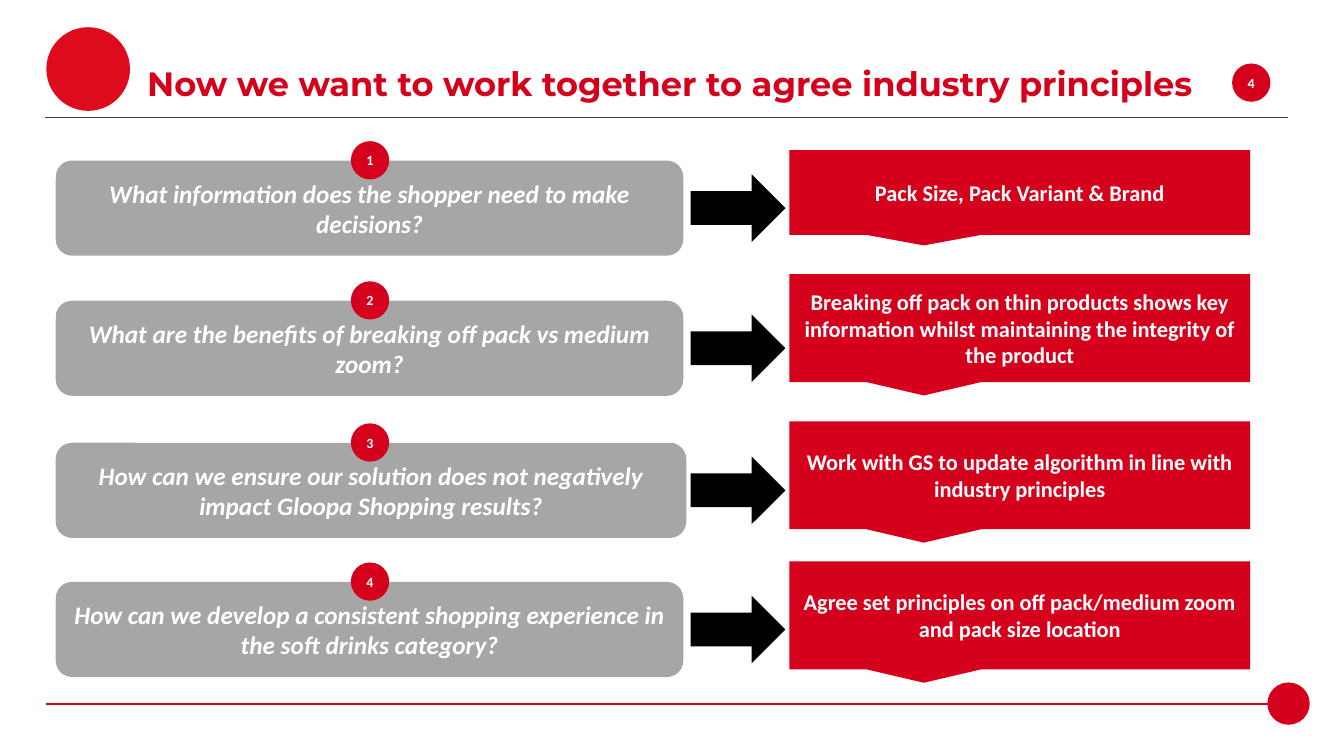
from dataclasses import dataclass
from typing import Optional

from lxml import etree
from pptx import Presentation
from pptx.dml.color import RGBColor
from pptx.enum.shapes import MSO_CONNECTOR, MSO_SHAPE
from pptx.enum.text import MSO_ANCHOR, PP_ALIGN
from pptx.oxml.ns import qn
from pptx.util import Inches, Pt

OVAL = MSO_SHAPE.OVAL
ROUNDED = MSO_SHAPE.ROUNDED_RECTANGLE
ARROW = MSO_SHAPE.RIGHT_ARROW
CALLOUT = MSO_SHAPE.RECTANGULAR_CALLOUT
STRAIGHT = MSO_CONNECTOR.STRAIGHT
CENTER = PP_ALIGN.CENTER
LEFT = PP_ALIGN.LEFT
MIDDLE = MSO_ANCHOR.MIDDLE
BOTTOM = MSO_ANCHOR.BOTTOM

RED = RGBColor(0xD5, 0x00, 0x1B)
BRIGHT_RED = RGBColor(0xDE, 0x0B, 0x1C)
GREY = RGBColor(0xA6, 0xA6, 0xA6)
DARK = RGBColor(0x40, 0x40, 0x40)
BLACK = RGBColor(0x00, 0x00, 0x00)
WHITE = RGBColor(0xFF, 0xFF, 0xFF)

BADGE_SIZE = 0.38
BADGE_RISE = 0.2
ARROW_DROP = 0.13


@dataclass
class TextStyle:
    size: float
    font: str = "Calibri"
    color: RGBColor = WHITE
    italic: bool = False


@dataclass
class Principle:
    question: str
    answer: str
    top: float
    answer_top: float
    answer_height: float = 1.07
    question_width: float = 6.21


TITLE_STYLE = TextStyle(24, "Montserrat", RED)
QUESTION_STYLE = TextStyle(18, italic=True)
ANSWER_STYLE = TextStyle(16)
BADGE_STYLE = TextStyle(10)

PRINCIPLES = [
    Principle("What information does the shopper need to make decisions?",
              "Pack Size, Pack Variant & Brand", 1.6, 1.49, answer_height=0.84),
    Principle("What are the benefits of breaking off pack vs medium zoom?",
              "Breaking off pack on thin products shows key information whilst "
              "maintaining the integrity of the product", 2.99, 2.72),
    Principle("How can we ensure our solution does not negatively impact "
              "Gloopa Shopping results?",
              "Work with GS to update algorithm in line with industry principles",
              4.4, 4.18, question_width=6.24),
    Principle("How can we develop a consistent shopping experience in the "
              "soft drinks category?",
              "Agree set principles on off pack/medium zoom and pack size location",
              5.78, 5.57),
]


def write(shape, text: str, style: TextStyle, align=CENTER, anchor=MIDDLE) -> None:
    frame = shape.text_frame
    frame.word_wrap = True
    frame.vertical_anchor = anchor
    paragraph = frame.paragraphs[0]
    paragraph.alignment = align
    run = paragraph.add_run()
    run.text = text
    run.font.name = style.font
    run.font.size = Pt(style.size)
    run.font.bold = True
    run.font.italic = style.italic
    run.font.color.rgb = style.color


def add_block(slide, kind, left: float, top: float, width: float, height: float,
              fill: RGBColor, text: str = "", style: Optional[TextStyle] = None):
    shape = slide.shapes.add_shape(
        kind, Inches(left), Inches(top), Inches(width), Inches(height))
    shape.shadow.inherit = False
    shape.fill.solid()
    shape.fill.fore_color.rgb = fill
    shape.line.fill.background()
    if style:
        write(shape, text, style)
    return shape


def add_badge(slide, left: float, top: float, number: int) -> None:
    add_block(slide, OVAL, left, top, BADGE_SIZE, BADGE_SIZE, RED,
              str(number), BADGE_STYLE)


def add_rule(slide, left: float, right: float, y: float,
             color: RGBColor, weight: float) -> None:
    rule = slide.shapes.add_connector(
        STRAIGHT, Inches(left), Inches(y), Inches(right), Inches(y))
    rule.line.color.rgb = color
    rule.line.width = Pt(weight)
    etree.SubElement(rule.line._get_or_add_ln().getparent(), qn("a:effectLst"))


def add_title(slide, text: str) -> None:
    box = slide.shapes.add_textbox(
        Inches(1.46), Inches(0.47), Inches(11.05), Inches(0.56))
    frame = box.text_frame
    frame.margin_left = frame.margin_right = Inches(0)
    frame.margin_top = frame.margin_bottom = Inches(0)
    write(box, text, TITLE_STYLE, LEFT, BOTTOM)
    frame.paragraphs[0].line_spacing = 0.9


def add_principle(slide, number: int, principle: Principle) -> None:
    question = add_block(slide, ROUNDED, 0.56, principle.top,
                         principle.question_width, 0.93, GREY,
                         principle.question, QUESTION_STYLE)
    question.line.color.rgb = GREY
    question.line.width = Pt(1)
    add_block(slide, ARROW, 6.85, principle.top + ARROW_DROP, 0.94, 0.67, BLACK)
    add_block(slide, CALLOUT, 7.83, principle.answer_top, 4.57,
              principle.answer_height, RED, principle.answer, ANSWER_STYLE)
    add_badge(slide, 3.48, principle.top - BADGE_RISE, number)


def main() -> None:
    presentation = Presentation()
    presentation.slide_width = Inches(13.33)
    presentation.slide_height = Inches(7.5)
    slide = presentation.slides.add_slide(presentation.slide_layouts[6])

    # Frame: rules and corner discs
    add_rule(slide, 0.46, 12.77, 6.98, RED, 1.5)
    add_rule(slide, 0.45, 12.77, 1.17, DARK, 0.75)
    add_block(slide, OVAL, 0.46, 0.27, 0.83, 0.83, BRIGHT_RED)
    add_block(slide, OVAL, 12.57, 6.77, 0.42, 0.42, RED)

    # Heading and slide number
    add_title(slide, "Now we want to work together to agree industry principles")
    add_badge(slide, 12.22, 0.63, 4)

    # Questions and their agreed principles
    for number, principle in enumerate(PRINCIPLES, start=1):
        add_principle(slide, number, principle)

    presentation.save("out.pptx")


if __name__ == "__main__":
    main()
